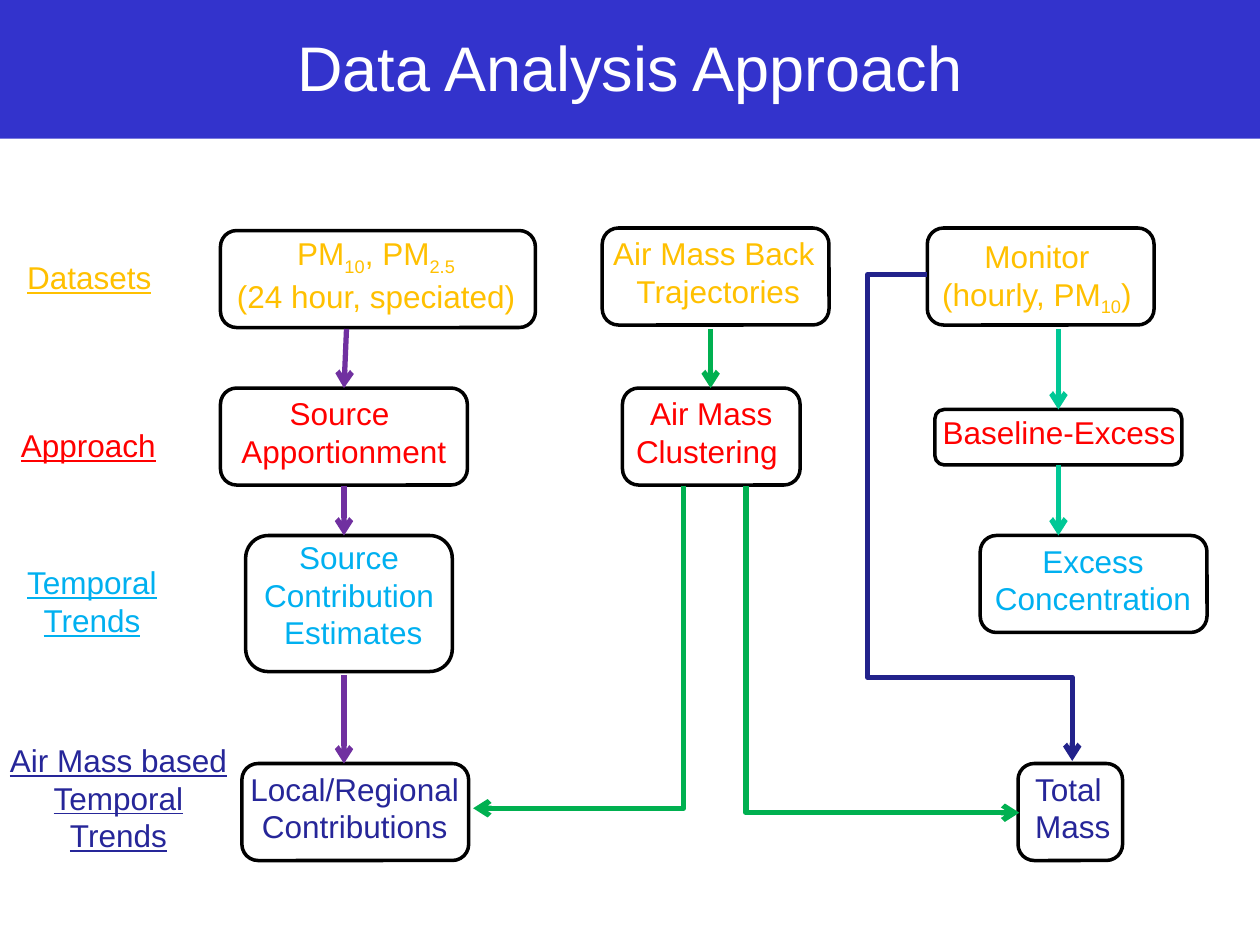
from lxml import etree
from pptx import Presentation
from pptx.dml.color import RGBColor
from pptx.enum.shapes import MSO_CONNECTOR, MSO_SHAPE
from pptx.enum.text import MSO_ANCHOR, PP_ALIGN
from pptx.oxml.ns import qn
from pptx.util import Inches, Pt

RECT = MSO_SHAPE.RECTANGLE
ROUND = MSO_SHAPE.ROUNDED_RECTANGLE
LINE = MSO_CONNECTOR.STRAIGHT
ELBOW = MSO_CONNECTOR.ELBOW
CENTER = PP_ALIGN.CENTER
MIDDLE = MSO_ANCHOR.MIDDLE

BLUE = RGBColor(0x33, 0x33, 0xCC)
WHITE = RGBColor(0xFF, 0xFF, 0xFF)
BLACK = RGBColor(0, 0, 0)
GOLD = RGBColor(0xFF, 0xC0, 0x00)
RED = RGBColor(0xFF, 0, 0)
SKY = RGBColor(0x00, 0xB0, 0xF0)
NAVY = RGBColor(0x26, 0x26, 0x99)
INDIGO = RGBColor(0x22, 0x22, 0x8B)
PURPLE = RGBColor(0x70, 0x30, 0xA0)
GREEN = RGBColor(0x00, 0xB0, 0x50)
TEAL = RGBColor(0x00, 0xC8, 0x96)


def add_text(frame, lines, size, color, under=None):
    for i, line in enumerate(lines):
        para = frame.add_paragraph() if i else frame.paragraphs[0]
        para.alignment = CENTER
        for j, part in enumerate(line.split("|")):
            run = para.add_run()
            run.text = part
            run.font.name = "Arial"
            run.font.size = Pt(size)
            run.font.color.rgb = color
            run.font.underline = under
            if j % 2:
                run.font._element.set("baseline", "-25000")


def add_arrow(kind, ends, color):
    link = shapes.add_connector(kind, *map(Inches, ends))
    link.line.color.rgb = color
    link.line.width = Pt(3)
    etree.SubElement(link.line._get_or_add_ln(), qn("a:tailEnd"), type="arrow")
    etree.SubElement(link._element.spPr, qn("a:effectLst"))
    return link


prs = Presentation()
prs.slide_width, prs.slide_height = Inches(10), Inches(7.5)
slide = prs.slides.add_slide(prs.slide_layouts[5])
shapes = slide.shapes
slide.background.fill.solid()
slide.background.fill.fore_color.rgb = BLUE

title = shapes.title
title.left, title.top = Inches(0.75), Inches(0.11)
title.width, title.height = Inches(8.5), Inches(0.83)
title.text_frame.vertical_anchor = MIDDLE
add_text(title.text_frame, ["Data Analysis Approach"], 36, WHITE)

panel = shapes.add_shape(RECT, 0, Inches(1.1), Inches(10), Inches(6.4))
panel.shadow.inherit = False
panel.fill.solid()
panel.fill.fore_color.rgb = WHITE
panel.line.fill.background()

labels = [
    (1.77, 1.81, 2.43, GOLD, False, ["PM|10|, PM|2.5", "(24 hour, speciated)"]),
    (7.36, 1.83, 1.74, GOLD, False, ["Monitor", "(hourly, PM|10|)"]),
    (4.76, 1.81, 1.88, GOLD, False, ["Air Mass Back ", "Trajectories"]),
    (1.81, 3.08, 1.84, RED, False, ["Source ", "Apportionment"]),
    (4.94, 3.08, 1.41, RED, False, ["Air Mass", "Clustering "]),
    (7.37, 3.23, 2.07, RED, False, ["Baseline-Excess"]),
    (1.99, 4.22, 1.63, SKY, False, ["Source ", "Contribution ", "Estimates"]),
    (7.79, 4.25, 1.77, SKY, False, ["Excess", "Concentration"]),
    (8.11, 6.06, 0.81, NAVY, False, ["Total ", "Mass"]),
    (1.88, 6.06, 1.87, NAVY, False, ["Local/Regional", "Contributions"]),
    (0.11, 2, 1.2, GOLD, True, ["Datasets"]),
    (0.06, 3.33, 1.28, RED, True, ["Approach"]),
    (0.11, 4.42, 1.24, SKY, True, ["Temporal", "Trends"]),
    (-0.03, 5.83, 1.94, NAVY, True, ["Air Mass based", "Temporal", "Trends"]),
]
for x, y, width, color, under, lines in labels:
    height = 0.1 + 0.3 * len(lines)
    box = shapes.add_textbox(*map(Inches, (x, y, width, height)))
    box.text_frame.word_wrap = False
    add_text(box.text_frame, lines, 18, color, under)

frames = [
    (1.75, 3.08, 1.96, 0.77), (4.94, 3.08, 1.41, 0.77),
    (7.42, 3.25, 1.96, 0.44), (1.75, 1.83, 2.5, 0.77),
    (7.36, 1.81, 1.8, 0.77), (7.78, 4.25, 1.8, 0.77),
    (1.92, 6.06, 1.8, 0.77), (1.95, 4.25, 1.64, 1.08),
    (8.08, 6.06, 0.83, 0.77), (4.78, 1.81, 1.8, 0.77),
]
for place in frames:
    frame = shapes.add_shape(ROUND, *map(Inches, place))
    frame.shadow.inherit = False
    frame.fill.background()
    frame.line.color.rgb = BLACK
    frame.line.width = Pt(2)

arrows = [
    (2.75, 2.61, 2.73, 3.08, PURPLE),
    (2.73, 3.86, 2.73, 4.25, PURPLE),
    (2.73, 5.36, 2.73, 6.06, PURPLE),
    (5.64, 2.61, 5.64, 3.08, GREEN),
    (8.4, 2.61, 8.4, 3.25, TEAL),
    (8.4, 3.69, 8.4, 4.25, TEAL),
]
for *ends, color in arrows:
    add_arrow(LINE, ends, color)

bends = [
    ("bentConnector4", (7.36, 2.18, 8.51, 6.04), INDIGO, 0, False, (-41300, 82800)),
    ("bentConnector2", (3.31, 4.3, 5.87, 5.97), GREEN, 90, False, ()),
    ("bentConnector2", (5.71, 4.07, 8.3, 6.24), GREEN, 270, True, ()),
]
for preset, ends, color, turn, flip, bend in bends:
    link = add_arrow(ELBOW, ends, color)
    form = link._element.spPr.find(qn("a:xfrm"))
    form.set("rot", str(turn * 60000))
    form.set("flipH", str(int(flip)))
    geom = link._element.spPr.find(qn("a:prstGeom"))
    geom.set("prst", preset)
    guides = geom.find(qn("a:avLst"))
    for i, value in enumerate(bend, 1):
        etree.SubElement(guides, qn("a:gd"), name=f"adj{i}", fmla=f"val {value}")

prs.save("out.pptx")
